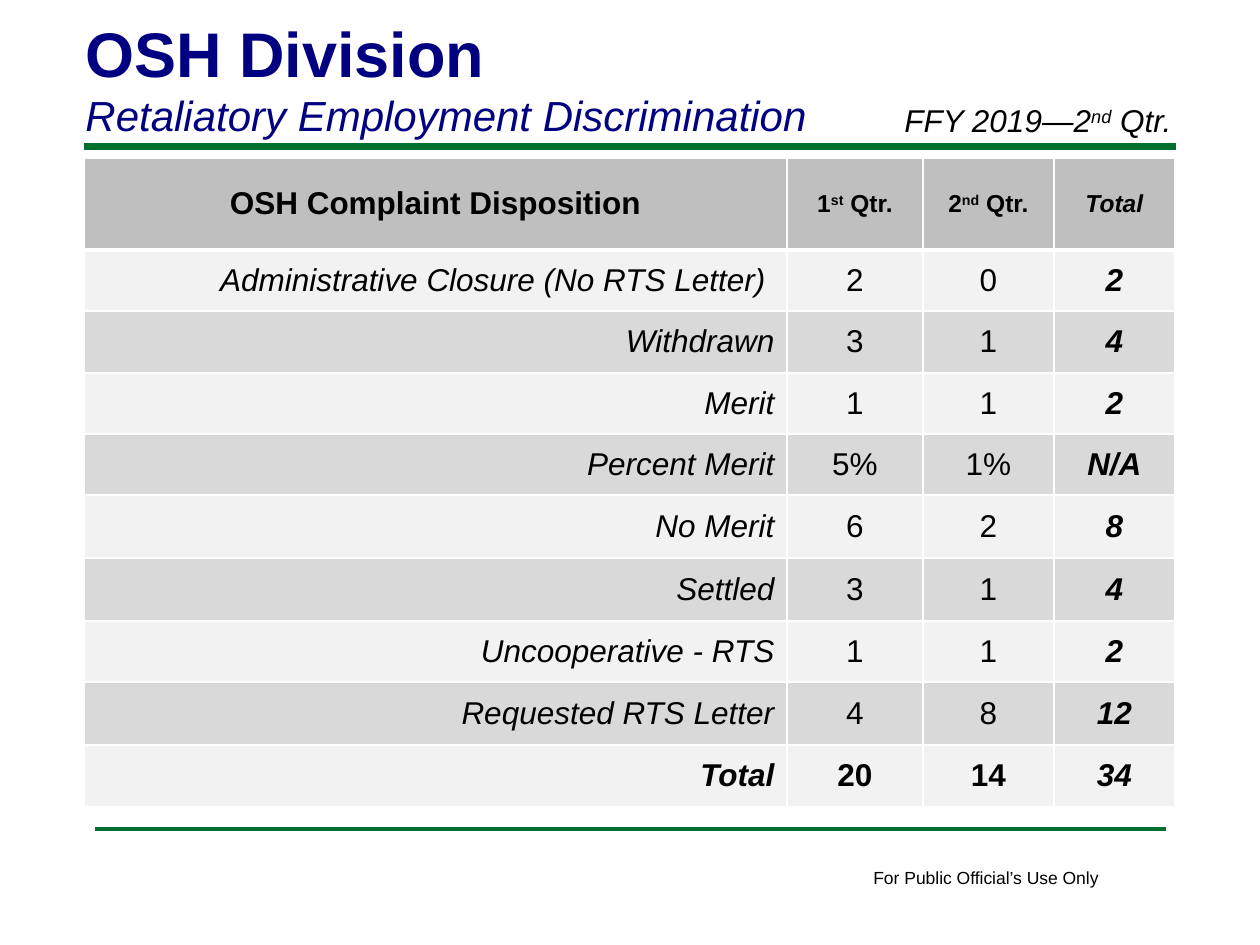
from dataclasses import dataclass
from typing import Any

import lxml.etree
import pptx
import pptx.dml.color
import pptx.enum.shapes
import pptx.enum.text
import pptx.oxml.ns
import pptx.util

PX = 914400 / 126
FONT = "Arial"
NAVY = pptx.dml.color.RGBColor(0x00, 0x00, 0x80)
GREEN = pptx.dml.color.RGBColor(0x00, 0x70, 0x30)
BLACK = pptx.dml.color.RGBColor(0x00, 0x00, 0x00)
HEADER_FILL = pptx.dml.color.RGBColor(0xBF, 0xBF, 0xBF)
ROW_FILLS = (
    pptx.dml.color.RGBColor(0xF2, 0xF2, 0xF2),
    pptx.dml.color.RGBColor(0xD9, 0xD9, 0xD9),
)
BORDER = "FFFFFF"
CENTER = pptx.enum.text.PP_ALIGN.CENTER
RIGHT = pptx.enum.text.PP_ALIGN.RIGHT
LEFT = pptx.enum.text.PP_ALIGN.LEFT
qn = pptx.oxml.ns.qn


@dataclass(frozen=True)
class Para:
    text: str
    size: int
    color: pptx.dml.color.RGBColor = BLACK
    bold: bool = False
    italic: bool = False
    align: Any = LEFT


@dataclass(frozen=True)
class TextBox:
    box: tuple[int, int, int, int]
    paras: tuple[Para, ...]
    wrap: bool = True


@dataclass(frozen=True)
class Rule:
    left: int
    right: int
    y: int
    weight: int


RULES = (Rule(84, 1176, 147, 4), Rule(95, 1166, 829, 2))
TEXT_BOXES = (
    TextBox((861, 861, 253, 34), (Para("For Public Official’s Use Only", 10),), wrap=False),
    TextBox((73, 8, 1040, 140), (
        Para("OSH Division", 36, NAVY, bold=True),
        Para("Retaliatory Employment Discrimination", 24, NAVY, italic=True),
    )),
    TextBox((892, 95, 315, 50), (Para("FFY 2019—2^nd^ Qtr.", 18, italic=True),)),
)
TABLE_ORIGIN = (84, 158)
COL_WIDTHS = (703, 136, 131, 121)
ROW_HEIGHTS = (92, 61, 62, 61, 61, 63, 63, 61, 63, 62)
HEADER = ("OSH Complaint Disposition", "1^st^ Qtr.", "2^nd^ Qtr.", "Total")
DISPOSITIONS = (
    ("Administrative Closure (No RTS Letter) ", "2", "0", "2"),
    ("Withdrawn", "3", "1", "4"),
    ("Merit", "1", "1", "2"),
    ("Percent Merit", "5%", "1%", "N/A"),
    ("No Merit", "6", "2", "8"),
    ("Settled", "3", "1", "4"),
    ("Uncooperative - RTS", "1", "1", "2"),
    ("Requested RTS Letter", "4", "8", "12"),
    ("Total", "20", "14", "34"),
)


def emu(px: int) -> int:
    return round(px * PX)


def set_all(obj: Any, values: dict[str, Any]) -> None:
    for name, value in values.items():
        setattr(obj, name, value)


def fill_para(p: Any, para: Para) -> None:
    p.alignment = para.align
    for i, piece in enumerate(para.text.split("^")):
        r = p.add_run()
        r.text = piece
        set_all(r.font, {
            "name": FONT,
            "size": pptx.util.Pt(para.size),
            "bold": para.bold,
            "italic": para.italic,
        })
        r.font.color.rgb = para.color
        if i % 2:
            r.font._element.set("baseline", "30000")


def draw_rule(s: Any, rule: Rule) -> None:
    sp = s.shapes.add_connector(
        pptx.enum.shapes.MSO_CONNECTOR.STRAIGHT,
        emu(rule.left), emu(rule.y), emu(rule.right), emu(rule.y),
    )
    sp.line.color.rgb = GREEN
    sp.line.width = pptx.util.Pt(rule.weight)
    lxml.etree.SubElement(sp._element.spPr, qn("a:effectLst"))


def draw_text(s: Any, item: TextBox) -> None:
    tf = s.shapes.add_textbox(*map(emu, item.box)).text_frame
    set_all(tf, {
        "word_wrap": item.wrap,
        "auto_size": pptx.enum.text.MSO_AUTO_SIZE.SHAPE_TO_FIT_TEXT,
    })
    for i, para in enumerate(item.paras):
        fill_para(tf.add_paragraph() if i else tf.paragraphs[0], para)


def add_borders(cell: Any, top: int, bottom: int) -> None:
    tc_pr = cell._tc.get_or_add_tcPr()
    for side, weight in {"L": 1, "R": 1, "T": top, "B": bottom}.items():
        ln = lxml.etree.SubElement(tc_pr, qn(f"a:ln{side}"), w=str(pptx.util.Pt(weight)))
        solid = lxml.etree.SubElement(ln, qn("a:solidFill"))
        lxml.etree.SubElement(solid, qn("a:srgbClr"), val=BORDER)


def cell_para(text: str, row: int, col: int) -> Para:
    last_col = col == len(COL_WIDTHS) - 1
    if row == 0:
        return Para(text, 14 if col else 18, bold=True, italic=last_col, align=CENTER)
    last_row = row == len(DISPOSITIONS)
    return Para(
        text, 18, bold=last_row or last_col, italic=col == 0 or last_col,
        align=CENTER if col else RIGHT,
    )


def draw_table(s: Any) -> None:
    rows = (HEADER, *DISPOSITIONS)
    size = (sum(COL_WIDTHS), sum(ROW_HEIGHTS))
    table = s.shapes.add_table(
        len(rows), len(HEADER), *map(emu, TABLE_ORIGIN + size)
    ).table
    for column, width in zip(table.columns, COL_WIDTHS):
        column.width = emu(width)
    for i, (row, height) in enumerate(zip(rows, ROW_HEIGHTS)):
        table.rows[i].height = emu(height)
        for j, text in enumerate(row):
            cell = table.cell(i, j)
            add_borders(cell, 3 if i == 1 else 1, 3 if i == 0 else 1)
            cell.fill.solid()
            cell.fill.fore_color.rgb = ROW_FILLS[(i - 1) % 2] if i else HEADER_FILL
            cell.vertical_anchor = pptx.enum.text.MSO_ANCHOR.MIDDLE
            fill_para(cell.text_frame.paragraphs[0], cell_para(text, i, j))


def main() -> None:
    prs = pptx.Presentation()
    set_all(prs, {"slide_width": emu(1260), "slide_height": emu(945)})
    s = prs.slides.add_slide(prs.slide_layouts[6])
    for rule in RULES:
        draw_rule(s, rule)
    footer, *headings = TEXT_BOXES
    draw_text(s, footer)
    draw_table(s)
    for heading in headings:
        draw_text(s, heading)
    prs.save("out.pptx")


if __name__ == "__main__":
    main()
